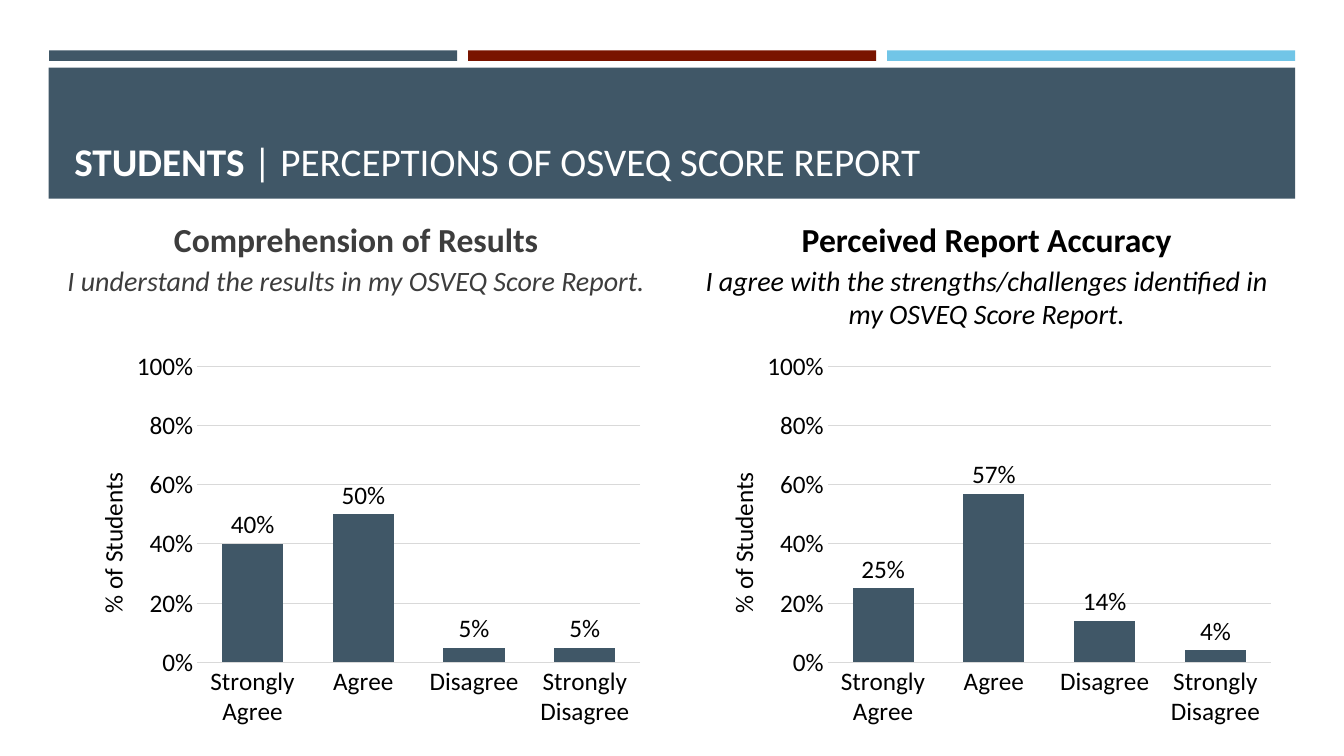
"""Build the slide on how students perceive their OSVEQ Score Report."""
from lxml import etree
from pptx import Presentation
from pptx.chart.data import CategoryChartData
from pptx.dml.color import RGBColor
from pptx.enum.chart import XL_CHART_TYPE, XL_LABEL_POSITION, XL_TICK_MARK
from pptx.enum.shapes import MSO_SHAPE
from pptx.enum.text import MSO_ANCHOR, PP_ALIGN
from pptx.oxml.ns import qn
from pptx.util import Pt

RECT = MSO_SHAPE.RECTANGLE
COLUMNS = XL_CHART_TYPE.COLUMN_CLUSTERED
OUTSIDE_END = XL_LABEL_POSITION.OUTSIDE_END
NO_TICK = XL_TICK_MARK.NONE
CENTER = PP_ALIGN.CENTER
BOTTOM, TOP = MSO_ANCHOR.BOTTOM, MSO_ANCHOR.TOP

THEME = {
    "font": "Calibri", "slate": "405767", "red": "791400", "sky": "71C5E7",
    "white": "FFFFFF", "gray": "3D3D3D", "black": "000000", "grid": "D9D9D9",
    "title": 28, "heading": 24, "statement": 20, "chart": 18,
}

TITLE = [("STUDENTS ", True), ("| PERCEPTIONS OF OSVEQ SCORE REPORT", False)]
AXIS_TITLE = "% of Students"
ANSWERS = ["Strongly Agree", "Agree", "Disagree", "Strongly Disagree"]
PANELS = [
    {"heading": "Comprehension of Results",
     "statement": "I understand the results in my OSVEQ Score Report.",
     "color": "gray", "shares": [0.4, 0.5, 0.05, 0.05]},
    {"heading": "Perceived Report Accuracy",
     "statement": "I agree with the strengths/challenges identified in my OSVEQ Score Report.",
     "color": "black", "shares": [0.25, 0.57, 0.14, 0.04]},
]

STRIPES = ["slate", "red", "sky"]
STRIPE_LEFT, STRIPE_PITCH, STRIPE_WIDTH = 35, 299.3, 291.6
PANEL_LEFT, PANEL_PITCH, PANEL_WIDTH = 37.4, 450.4, 434
CHART_INDENT, CHART_WIDTH = 6.4, 422
PLOT_LAYOUT = {"x": 0.23, "y": 0.06, "w": 0.75, "h": 0.76}
AXIS_TITLE_LAYOUT = {"x": 0.05, "y": 0.32}


def rgb(name):
    return RGBColor.from_string(THEME[name])


def style(font, size, color="black", bold=False, italic=False):
    font.name, font.size = THEME["font"], Pt(THEME[size])
    font.color.rgb = rgb(color)
    font.bold, font.italic = bold, italic


def add_bar(s, x, y, w, h, color):
    sp = s.shapes.add_shape(RECT, Pt(x), Pt(y), Pt(w), Pt(h))
    sp.shadow.inherit = False
    sp.fill.solid()
    sp.fill.fore_color.rgb = rgb(color)
    sp.line.fill.background()


def add_text_box(s, x, y, w, h, anchor):
    tf = s.shapes.add_textbox(Pt(x), Pt(y), Pt(w), Pt(h)).text_frame
    tf.word_wrap, tf.vertical_anchor = True, anchor
    return tf


def add_run(p, text, *look):
    r = p.add_run()
    r.text = text
    style(r.font, *look)


def set_layout(parent, index, fractions, inner=False):
    for old in parent.findall(qn("c:layout")):
        parent.remove(old)
    layout = etree.Element(qn("c:layout"))
    parent.insert(index, layout)
    manual = etree.SubElement(layout, qn("c:manualLayout"))
    settings = [("layoutTarget", "inner")] if inner else []
    settings += [("xMode", "edge"), ("yMode", "edge"), *fractions.items()]
    for tag, value in settings:
        etree.SubElement(manual, qn("c:" + tag)).set("val", str(value))


def style_axes(chart):
    cat, val = chart.category_axis, chart.value_axis
    for axis in (cat, val):
        axis.major_tick_mark = axis.minor_tick_mark = NO_TICK
        style(axis.tick_labels.font, "chart")
    val.minimum_scale, val.maximum_scale, val.major_unit = 0, 1, 0.2
    val.tick_labels.number_format = "0%"
    val.tick_labels.number_format_is_linked = False
    val.format.line.fill.background()
    val.has_major_gridlines = True
    for line in (cat.format.line, val.major_gridlines.format.line):
        line.color.rgb, line.width = rgb("grid"), Pt(0.75)

    val.has_title = True
    title = val.axis_title
    add_run(title.text_frame.paragraphs[0], AXIS_TITLE, "chart")
    root = val.axis_title._element
    body = root.find(".//" + qn("a:bodyPr"))
    body.set("rot", "-5400000")
    body.set("vert", "horz")
    set_layout(root, 1, AXIS_TITLE_LAYOUT)


def add_share_chart(s, x, y, w, h, shares):
    data = CategoryChartData(number_format="0%")
    data.categories = ANSWERS
    data.add_series("Series 1", shares)
    chart = s.shapes.add_chart(COLUMNS, Pt(x), Pt(y), Pt(w), Pt(h), data).chart
    chart.has_title = chart.has_legend = False
    style(chart.font, "chart")
    style_axes(chart)

    plot = chart.plots[0]
    plot.gap_width, plot.overlap, plot.vary_by_categories = 81, -27, False
    fill = plot.series[0].format.fill
    fill.solid()
    fill.fore_color.rgb = rgb("slate")
    plot.has_data_labels = True
    labels = plot.data_labels
    labels.show_value, labels.position = True, OUTSIDE_END
    labels.number_format, labels.number_format_is_linked = "0%", False
    style(labels.font, "chart")
    set_layout(chart._chartSpace.find(".//" + qn("c:plotArea")), 0, PLOT_LAYOUT, True)


def add_panel(s, x, panel):
    tf = add_text_box(s, x, 152.6, PANEL_WIDTH, 345, TOP)
    heading, statement = tf.paragraphs[0], tf.add_paragraph()
    for p in (heading, statement):
        p.alignment, p.space_after = CENTER, Pt(3)
    add_run(heading, panel["heading"], "heading", panel["color"], True)
    add_run(statement, panel["statement"], "statement", panel["color"], False, True)
    add_share_chart(s, x + CHART_INDENT, 245.2, CHART_WIDTH, 278, panel["shares"])


def main():
    prs = Presentation()
    prs.slide_width, prs.slide_height = Pt(960), Pt(540)
    s = prs.slides.add_slide(prs.slide_layouts[6])
    for i, color in enumerate(STRIPES):
        add_bar(s, STRIPE_LEFT + i * STRIPE_PITCH, 36, STRIPE_WIDTH, 7.5, color)
    add_bar(s, 34.8, 48.4, 890.4, 93.6, "slate")
    tf = add_text_box(s, 46, 55.4, 868, 80, BOTTOM)
    for text, bold in TITLE:
        add_run(tf.paragraphs[0], text, "title", "white", bold)
    for i, panel in enumerate(PANELS):
        add_panel(s, PANEL_LEFT + i * PANEL_PITCH, panel)
    prs.save("out.pptx")


if __name__ == "__main__":
    main()
